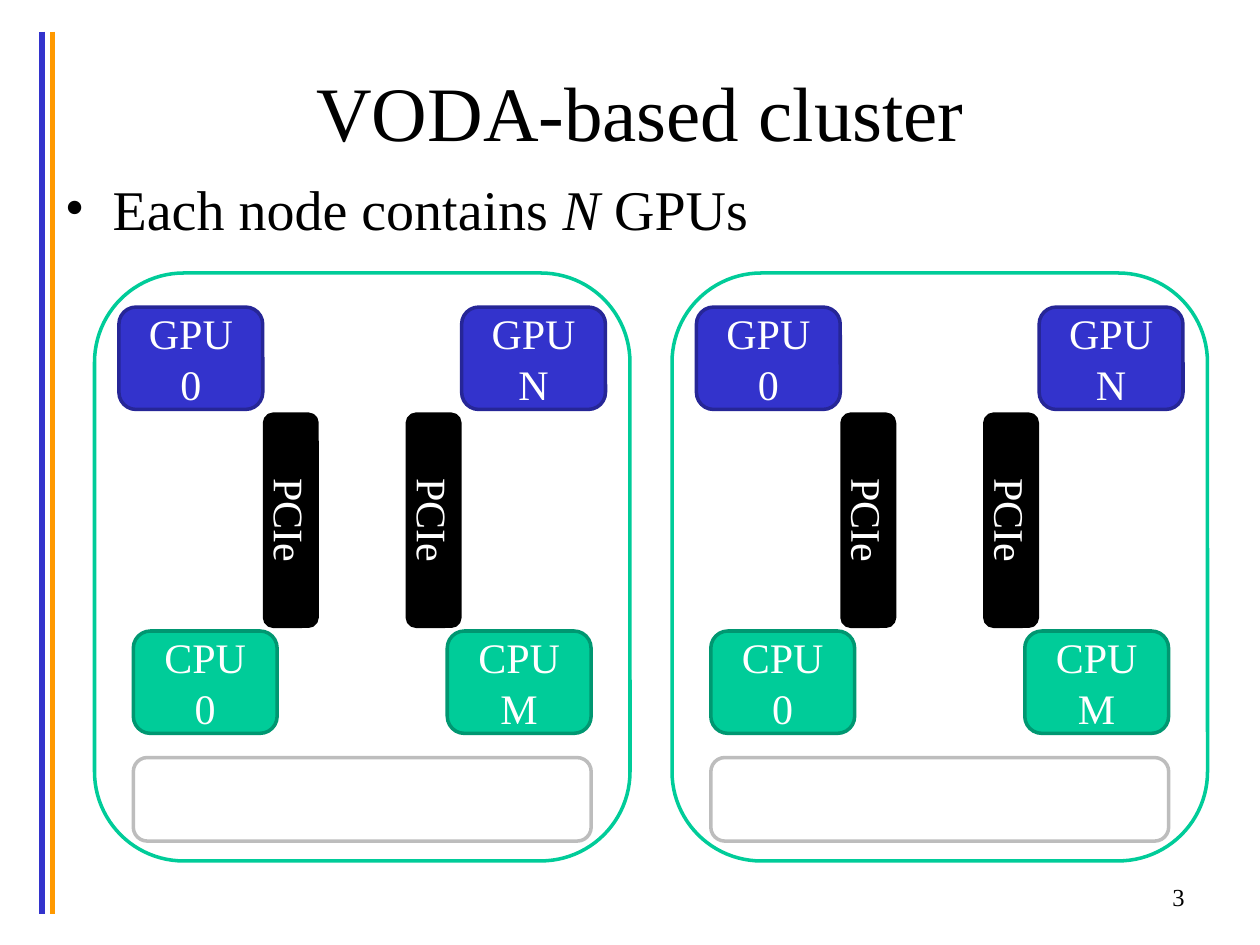
from lxml import etree
from pptx import Presentation
from pptx.dml.color import RGBColor
from pptx.enum import shapes, text
from pptx.oxml.ns import qn
from pptx.util import Inches, Pt

COLS, ROWS = 120, 90
CELL = Inches(10) / COLS
FONT = "Times New Roman"
HUES = {
    "blue": "3333CC", "navy": "262697", "gold": "FF9900",
    "green": "00CC99", "moss": "009771", "gray": "BDBDBD",
    "black": "000000", "white": "FFFFFF",
}
NODE = {"left": 9, "top": 26, "wide": 51, "high": 56, "step": 55}


def hue(name):
    """Return the named colour."""
    return RGBColor.from_string(HUES[name])


def grid(*cells):
    """Turn grid cells into slide lengths."""
    return [round(cell * CELL) for cell in cells]


def style(item, **values):
    """Set each given value on the item."""
    for name, value in values.items():
        setattr(item, name, value)


def write(frame, runs, size, tint, align, anchor):
    """Write one paragraph of (words, italic) runs and return it."""
    style(frame, word_wrap=True, vertical_anchor=anchor)
    para = frame.paragraphs[0]
    para.alignment = align
    for words, slant in runs:
        run = para.add_run()
        run.text = words
        style(run.font, name=FONT, size=Pt(size), italic=slant)
        run.font.color.rgb = hue(tint)
    return para


def label(slide, area, runs, size, align, anchor=text.MSO_ANCHOR.TOP):
    """Add a black text box and return its paragraph."""
    box = slide.shapes.add_textbox(*grid(*area))
    return write(box.text_frame, runs, size, "black", align, anchor)


def bullet(para):
    """Give the paragraph a hanging bullet."""
    para.space_before = Pt(6.4)
    props = para._p.get_or_add_pPr()
    hang = Inches(0.38)
    props.set("marL", str(hang))
    props.set("indent", str(-hang))
    etree.SubElement(props, qn("a:buFont")).set("typeface", FONT)
    etree.SubElement(props, qn("a:buChar")).set("char", "•")


def rule(slide, col, tint):
    """Draw a vertical margin rule."""
    line = slide.shapes.add_connector(
        shapes.MSO_CONNECTOR.STRAIGHT, *grid(col, 3, col, ROWS - 3))
    line.line.width = Pt(3)
    line.line.color.rgb = hue(tint)
    etree.SubElement(line.element.spPr, qn("a:effectLst"))


def block(group, area, fill, edge, words="", turn=False):
    """Add a rounded block with an optional caption."""
    shape = group.shapes.add_shape(
        shapes.MSO_SHAPE.ROUNDED_RECTANGLE, *grid(*area))
    shape.shadow.inherit = False
    if fill:
        shape.fill.solid()
        shape.fill.fore_color.rgb = hue(fill)
    else:
        shape.fill.background()
    shape.line.width = Pt(2)
    shape.line.color.rgb = hue(edge)
    if words:
        write(shape.text_frame, [(words, False)], 24, "white",
              text.PP_ALIGN.CENTER, text.MSO_ANCHOR.MIDDLE)
    if turn:
        shape.text_frame._txBody.bodyPr.set("vert", "vert")


def pair(group, left, spot, look, names, turn=False):
    """Add two blocks mirrored about the middle of a node."""
    inset, down, wide, high = spot
    for shift, name in zip((inset, NODE["wide"] - inset - wide), names):
        area = (left + shift, NODE["top"] + down, wide, high)
        block(group, area, *look, name, turn)


def node(slide, left):
    """Draw one cluster node."""
    group = slide.shapes.add_group_shape()
    pair(group, left, (2.33, 3.25, 13.7, 9.75), ("blue", "navy"),
         ("GPU 0", "GPU N"))
    pair(group, left, (16.2, 13.45, 5, 20.2), ("black", "black"),
         ("PCIe", "PCIe"), True)
    pair(group, left, (3.7, 34.1, 13.7, 9.75), ("green", "moss"),
         ("CPU 0", "CPU M"))
    block(group, (left + 3.7, NODE["top"] + 46.15, 43.6, 7.95),
          "white", "gray")
    block(group, (left, NODE["top"], NODE["wide"], NODE["high"]),
          None, "green")


def main():
    """Build the slide and save it."""
    deck = Presentation()
    style(deck, slide_width=Inches(10), slide_height=Inches(7.5))
    slide = deck.slides.add_slide(deck.slide_layouts[6])
    rule(slide, 4, "blue")
    rule(slide, 5, "gold")
    label(slide, (9, 3, 104, 15), [("VODA-based cluster", False)], 44,
          text.PP_ALIGN.CENTER, text.MSO_ANCHOR.MIDDLE)
    body = [("Each node contains ", False), ("N", True), (" GPUs", False)]
    bullet(label(slide, (5, 16, 109, 12.6), body, 32, text.PP_ALIGN.LEFT))
    for turn in (1, 0):
        node(slide, NODE["left"] + turn * NODE["step"])
    label(slide, (107, 83.4, 7, 4.8), [("3", False)], 14,
          text.PP_ALIGN.RIGHT)
    deck.save("out.pptx")


if __name__ == "__main__":
    main()
